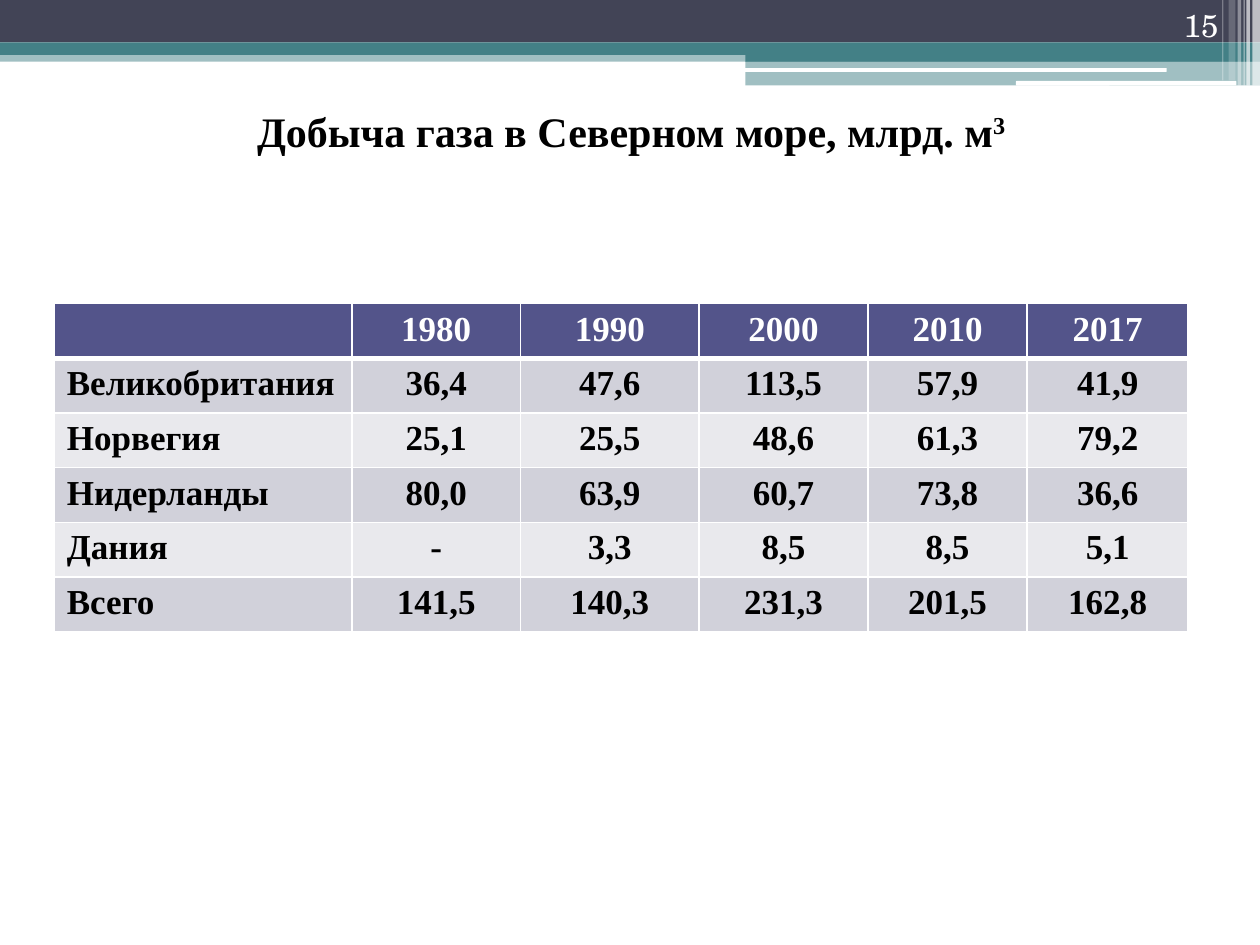
from lxml import etree
from pptx import Presentation
from pptx.dml.color import RGBColor
from pptx.enum import shapes, text
from pptx.oxml import ns
from pptx.util import Pt

COLORS = {
    "white": "FFFFFF", "black": "000000", "navy": "424456", "teal": "438086",
    "header": "53548A", "band_dark": "D1D1DA", "band_light": "E9E9ED",
}
SERIF = "Times New Roman"
RECT = shapes.MSO_SHAPE.RECTANGLE
ROUNDED = shapes.MSO_SHAPE.ROUNDED_RECTANGLE

# left, top, width, height, colour, opacity in percent
BANDS = [
    (0, 28.8, 720, 6.5, "teal", 50),
    (0, 0, 720, 24.2, "navy", 100),
    (0, 24.2, 720, 7.2, "teal", 100),
    (426, 28.1, 294, 7.2, "teal", 100),
    (426, 34.9, 294, 14, "teal", 50),
]
HIGHLIGHTS = [
    (425.5, 38.9, 241.2, 2.2, "white", 100),
    (580.5, 46.3, 126, 2.6, "white", 100),
]
# left, width, height, opacity in percent
STRIPES = [
    (715.7, 4.3, 49, 65), (712.2, 2, 49, 65), (710.6, 0.7, 49, 60),
    (707.2, 2, 49, 40), (702, 4, 46, 20), (698.4, 0.7, 46, 30),
]

COLUMN_WIDTHS = [170, 96.5, 102, 96.5, 91, 92]
ROW_HEIGHT = 29.25
GAS_OUTPUT = [
    ["", "1980", "1990", "2000", "2010", "2017"],
    ["Великобритания", "36,4", "47,6", "113,5", "57,9", "41,9"],
    ["Норвегия", "25,1", "25,5", "48,6", "61,3", "79,2"],
    ["Нидерланды", "80,0", "63,9", "60,7", "73,8", "36,6"],
    ["Дания", "-", "3,3", "8,5", "8,5", "5,1"],
    ["Всего", "141,5", "140,3", "231,3", "201,5", "162,8"],
]


def rgb(name):
    return RGBColor.from_string(COLORS[name])


def add_bar(slide, kind, left, top, width, height, color, opacity):
    bar = slide.shapes.add_shape(kind, Pt(left), Pt(top), Pt(width), Pt(height))
    bar.shadow.inherit = False
    bar.line.fill.background()
    bar.fill.solid()
    bar.fill.fore_color.rgb = rgb(color)
    if opacity < 100:
        tint = bar.fill._xPr.find(".//" + ns.qn("a:srgbClr"))
        etree.SubElement(tint, ns.qn("a:alpha")).set("val", str(opacity * 1000))


def add_run(paragraph, words, size, color, font=SERIF, bold=True):
    run = paragraph.add_run()
    run.text = words
    run.font.size = Pt(size)
    run.font.name = font
    run.font.bold = bold
    run.font.color.rgb = rgb(color)
    return run


def add_text_line(slide, left, top, width, height, anchor, align):
    """Add an empty text box and return its paragraph."""
    box = slide.shapes.add_textbox(Pt(left), Pt(top), Pt(width), Pt(height))
    frame = box.text_frame
    frame.word_wrap = True
    frame.vertical_anchor = anchor
    frame.paragraphs[0].alignment = align
    return frame.paragraphs[0]


def set_borders(cell, bottom_widths):
    """Draw white cell borders; bottom_widths overrides the 1 pt default by side."""
    properties = cell._tc.get_or_add_tcPr()
    for position, side in enumerate(("lnL", "lnR", "lnT", "lnB")):
        border = etree.Element(ns.qn("a:" + side))
        border.set("w", str(Pt(bottom_widths.get(side, 1))))
        fill = etree.SubElement(border, ns.qn("a:solidFill"))
        etree.SubElement(fill, ns.qn("a:srgbClr")).set("val", COLORS["white"])
        properties.insert(position, border)


def add_output_table(slide):
    frame = slide.shapes.add_table(
        len(GAS_OUTPUT), len(COLUMN_WIDTHS), Pt(31), Pt(173.5),
        Pt(sum(COLUMN_WIDTHS)), Pt(ROW_HEIGHT * len(GAS_OUTPUT)))
    table = frame.table
    for column, width in zip(table.columns, COLUMN_WIDTHS):
        column.width = Pt(width)
    for r, values in enumerate(GAS_OUTPUT):
        table.rows[r].height = Pt(ROW_HEIGHT)
        band = "header" if r == 0 else ("band_light", "band_dark")[r % 2]
        thick = {0: {"lnB": 3}, 1: {"lnT": 3}}.get(r, {})
        for c, value in enumerate(values):
            cell = table.cell(r, c)
            cell.fill.solid()
            cell.fill.fore_color.rgb = rgb(band)
            set_borders(cell, thick)
            paragraph = cell.text_frame.paragraphs[0]
            if c:
                paragraph.alignment = text.PP_ALIGN.CENTER
            if value:
                add_run(paragraph, value, 20, "black" if r else "white")


def main():
    deck = Presentation()
    deck.slide_width, deck.slide_height = Pt(720), Pt(540)
    slide = deck.slides.add_slide(deck.slide_layouts[6])

    for band in BANDS:
        add_bar(slide, RECT, *band)
    for highlight in HIGHLIGHTS:
        add_bar(slide, ROUNDED, *highlight)
    for left, width, height, opacity in STRIPES:
        add_bar(slide, RECT, left, 0, width, height, "white", opacity)

    title = add_text_line(slide, 36.7, 54.7, 648, 39.6,
                          text.MSO_ANCHOR.MIDDLE, text.PP_ALIGN.CENTER)
    add_run(title, "Добыча газа в Северном море, млрд. м", 24, "black")
    cubed = add_run(title, "3", 24, "black")
    cubed._r.get_or_add_rPr().set("baseline", "30000")

    add_output_table(slide)

    page_number = add_text_line(slide, 643.7, 0, 59.8, 28.8,
                                text.MSO_ANCHOR.BOTTOM, text.PP_ALIGN.RIGHT)
    add_run(page_number, "15", 18, "white", "TeX Gyre Schola", False)

    deck.save("out.pptx")


if __name__ == "__main__":
    main()
